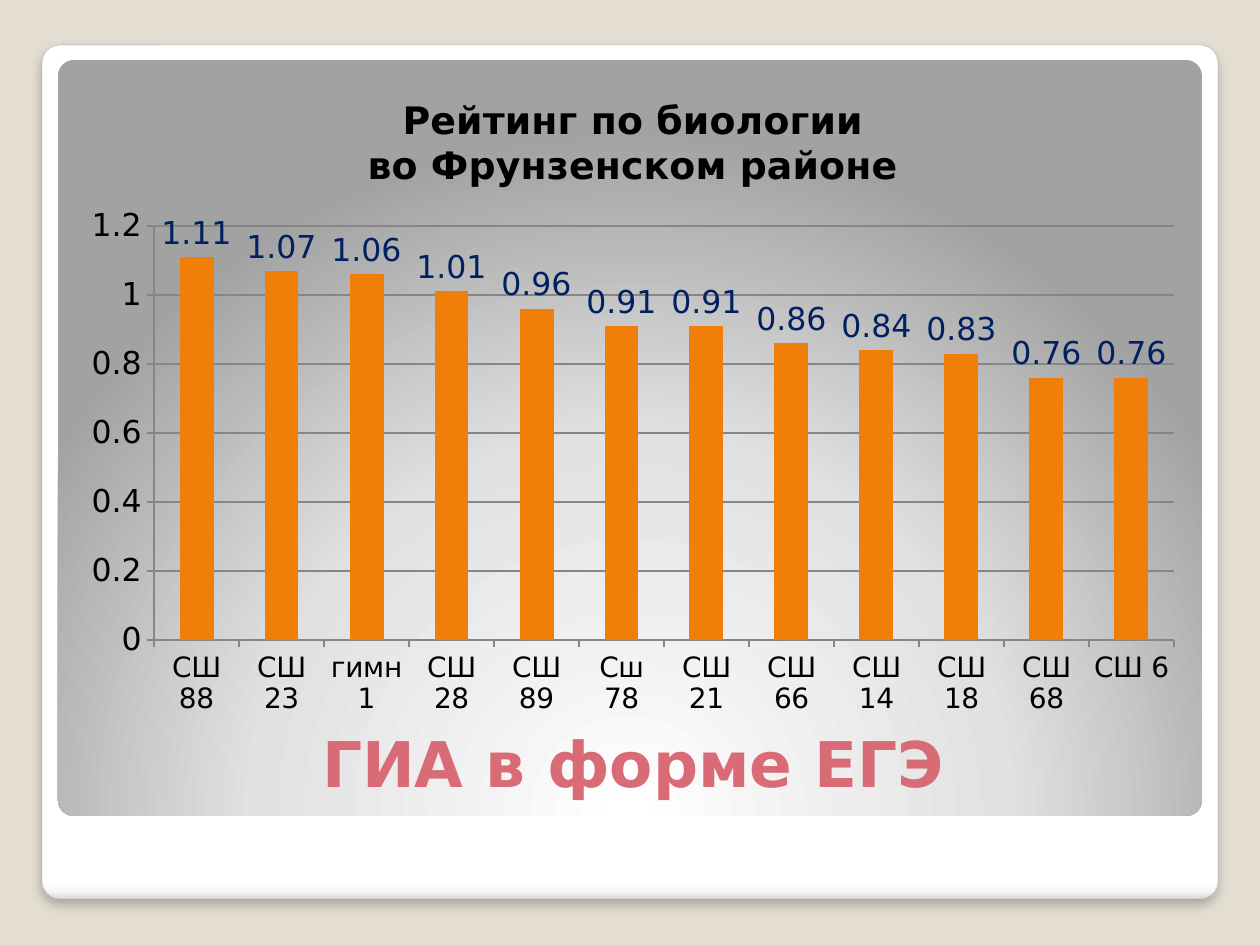
from lxml import etree
from pptx import Presentation
from pptx.chart.data import CategoryChartData
from pptx.dml.color import RGBColor
from pptx.enum.chart import XL_CHART_TYPE as ChartType, XL_LABEL_POSITION as LabelPos
from pptx.enum.chart import XL_TICK_MARK as Tick
from pptx.enum.shapes import MSO_SHAPE as Shape
from pptx.enum.text import MSO_ANCHOR as Anchor, PP_ALIGN as Align
from pptx.oxml import parse_xml
from pptx.oxml.ns import nsdecls, qn
from pptx.util import Pt

FONT = "DejaVu Sans"
TITLE = "ГИА в форме ЕГЭ"
CHART_TITLE = "Рейтинг по биологии\nво Фрунзенском районе"
RATINGS = [
    ("СШ 88", 1.11), ("СШ 23", 1.07), ("гимн 1", 1.06), ("СШ 28", 1.01),
    ("СШ 89", 0.96), ("Сш 78", 0.91), ("СШ 21", 0.91), ("СШ 66", 0.86),
    ("СШ 14", 0.84), ("СШ 18", 0.83), ("СШ 68", 0.76), ("СШ 6", 0.76),
]
COLORS = {
    "background": "E3DED1", "border": "A4A4A4", "title": "D96B77", "bar": "F07F09",
    "value": "002060", "text": "000000", "grid": "868686",
}
FRAME_STOPS = [(0, "FFFFFF"), (98, "FFFFFF"), (99, "F7F7F7"), (100, "DADADA")]
PANEL_STOPS = [(0, "FFFFFF"), (55, "E1E1E1"), (100, "A2A2A2")]
DOWNWARD = '<a:lin ang="5400000" scaled="0"/>'
FROM_BOTTOM = ('<a:path path="circle"><a:fillToRect l="50000" t="175000" '
               'r="50000" b="-75000"/></a:path>')

# left, top, width, height in px
FRAME = (42, 45, 1176, 854)
PANEL = (58, 60, 1144, 756)
TITLE_BOX = (69, 659, 1128, 147)
CHART_BOX = (69, 73, 1128, 655)
PLOT = (154, 226, 1020, 414)


def px(n):
    return round(n * 914400 / 126)


def box(rect):
    return [px(n) for n in rect]


def rgb(name):
    return RGBColor.from_string(COLORS[name])


def style_font(font, size, color, bold=False):
    font.name, font.size, font.bold = FONT, Pt(size), bold
    font.color.rgb = rgb(color)


def add_card(s, rect, stops, direction):
    card = s.shapes.add_shape(Shape.ROUNDED_RECTANGLE, *box(rect))
    card.adjustments[0] = 0.021
    card.shadow.inherit = False
    card.line.fill.background()
    card.fill.gradient()
    gs = "".join(f'<a:gs pos="{pos * 1000}"><a:srgbClr val="{c}"/></a:gs>' for pos, c in stops)
    sp_pr = card.element.spPr
    sp_pr.replace(sp_pr.find(qn("a:gradFill")), parse_xml(
        f'<a:gradFill {nsdecls("a")} rotWithShape="1"><a:gsLst>{gs}</a:gsLst>'
        f'{direction}</a:gradFill>'))
    return card


def place_plot(chart):
    """Fix the inner plot area as fractions of the chart box."""
    left, top, width, height = CHART_BOX
    places = {
        "x": (PLOT[0] - left) / width, "y": (PLOT[1] - top) / height,
        "w": PLOT[2] / width, "h": PLOT[3] / height,
    }
    area = chart.element.find(".//" + qn("c:plotArea"))
    for old in area.findall(qn("c:layout")):
        area.remove(old)
    layout = etree.Element(qn("c:layout"))
    manual = etree.SubElement(layout, qn("c:manualLayout"))
    settings = {"layoutTarget": "inner", "xMode": "edge", "yMode": "edge"}
    settings.update({key: f"{value:.4f}" for key, value in places.items()})
    for key, value in settings.items():
        etree.SubElement(manual, qn(f"c:{key}")).set("val", value)
    area.insert(0, layout)


def add_rating_chart(s):
    data = CategoryChartData()
    data.categories = [school for school, _ in RATINGS]
    data.add_series("Series 1", [rating for _, rating in RATINGS])
    chart = s.shapes.add_chart(ChartType.COLUMN_CLUSTERED, *box(CHART_BOX), data).chart
    style_font(chart.font, 18, "text")
    chart.has_legend = False

    chart.has_title = True
    tf = chart.chart_title.text_frame
    tf.text = CHART_TITLE
    for p in tf.paragraphs:
        for r in p.runs:
            style_font(r.font, 21.6, "text", bold=True)

    plot = chart.plots[0]
    plot.vary_by_categories = False
    plot.gap_width = 150
    fill = plot.series[0].format.fill
    fill.solid()
    fill.fore_color.rgb = rgb("bar")
    plot.has_data_labels = True
    labels = plot.data_labels
    labels.show_value = True
    labels.position = LabelPos.OUTSIDE_END
    style_font(labels.font, 18, "value")

    values = chart.value_axis
    values.minimum_scale, values.maximum_scale, values.major_unit = 0, 1.2, 0.2
    values.has_major_gridlines = True
    for axis, size in ((chart.category_axis, 16), (values, 18)):
        axis.major_tick_mark = Tick.OUTSIDE
        style_font(axis.tick_labels.font, size, "text")
        axis.format.line.color.rgb = rgb("grid")
    values.major_gridlines.format.line.color.rgb = rgb("grid")
    place_plot(chart)


def main():
    prs = Presentation()
    prs.slide_width, prs.slide_height = px(1260), px(945)
    s = prs.slides.add_slide(prs.slide_layouts[5])
    s.background.fill.solid()
    s.background.fill.fore_color.rgb = rgb("background")

    frame = add_card(s, FRAME, FRAME_STOPS, DOWNWARD)
    frame.line.color.rgb = rgb("border")
    frame.line.width = Pt(0.16)
    frame.element.spPr.find(qn("a:effectLst")).append(parse_xml(
        f'<a:outerShdw {nsdecls("a")} blurRad="{Pt(6)}" dist="{Pt(4)}" dir="5400000">'
        '<a:srgbClr val="000000"><a:alpha val="25000"/></a:srgbClr></a:outerShdw>'))
    add_card(s, PANEL, PANEL_STOPS, FROM_BOTTOM)

    title = s.shapes.title
    title.element.getparent().append(title.element)  # bring in front of the cards
    title.left, title.top, title.width, title.height = box(TITLE_BOX)
    tf = title.text_frame
    tf.text = TITLE
    tf.vertical_anchor = Anchor.BOTTOM
    tf.paragraphs[0].alignment = Align.CENTER
    style_font(tf.paragraphs[0].runs[0].font, 36, "title", bold=True)

    add_rating_chart(s)
    prs.save("out.pptx")


if __name__ == "__main__":
    main()
